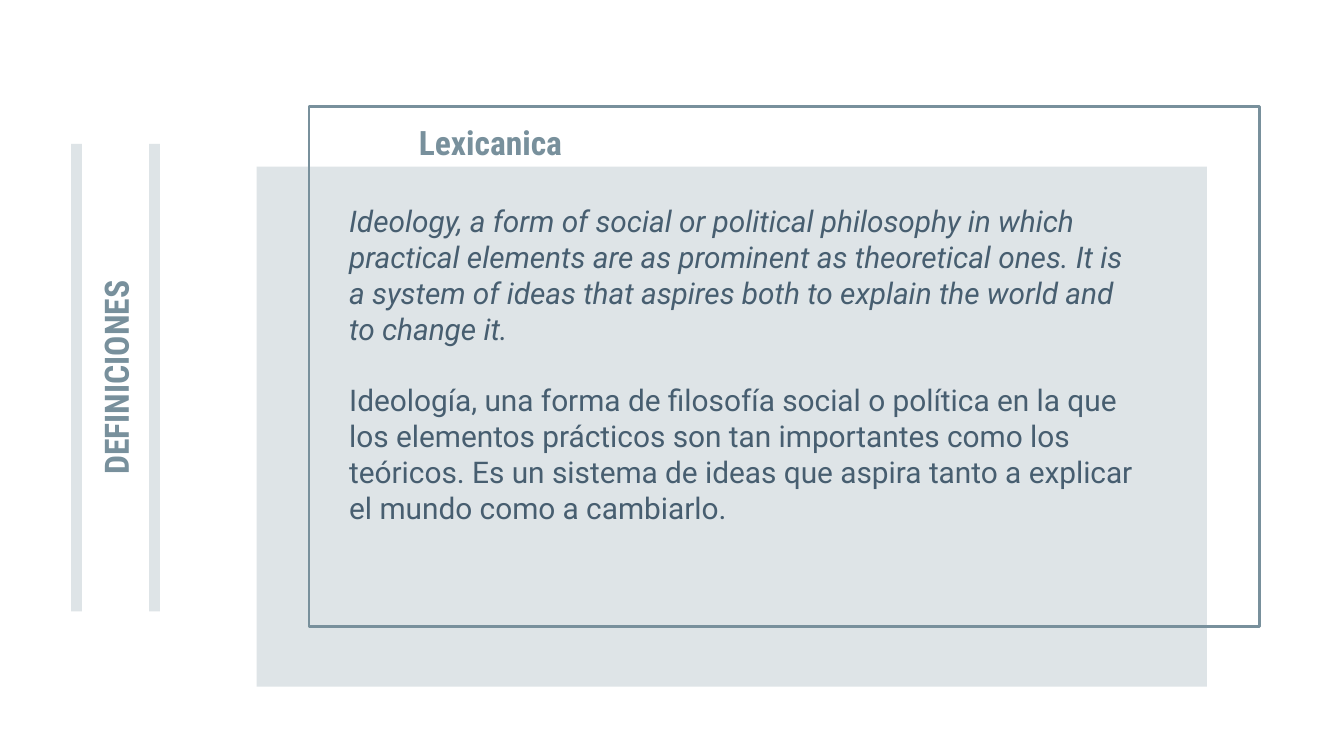
from lxml.etree import SubElement
from pptx import Presentation
from pptx.dml.color import RGBColor
from pptx.enum.shapes import MSO_SHAPE as Shape
from pptx.enum.text import MSO_ANCHOR as Anchor, MSO_AUTO_SIZE as AutoSize, PP_ALIGN as Align
from pptx.oxml.ns import qn
from pptx.util import Inches, Pt

SLATE = RGBColor(0x78, 0x90, 0x9C)
INK = RGBColor(0x47, 0x5E, 0x70)
ENGLISH = (
    "Ideology, a form of social or political philosophy in which practical elements "
    "are as prominent as theoretical ones. It is a system of ideas that aspires both "
    "to explain the world and to change it."
)
SPANISH = (
    "Ideología, una forma de filosofía social o política en la que los elementos "
    "prácticos son tan importantes como los teóricos. Es un sistema de ideas que "
    "aspira tanto a explicar el mundo como a cambiarlo."
)


def add_rectangle(slide, left, top, width, height):
    """Add a rectangle without a shadow."""
    rectangle = slide.shapes.add_shape(
        Shape.RECTANGLE, Inches(left), Inches(top), Inches(width), Inches(height)
    )
    rectangle.shadow.inherit = False
    return rectangle


def add_outline(slide, *box):
    """Add an unfilled frame with a slate line."""
    frame = add_rectangle(slide, *box)
    frame.fill.background()
    frame.line.color.rgb = SLATE
    frame.line.width = Pt(1.5)


def add_tint(slide, *box):
    """Add a borderless rectangle in translucent slate."""
    tint = add_rectangle(slide, *box)
    tint.fill.solid()
    tint.fill.fore_color.rgb = SLATE
    tint.line.fill.background()
    color = tint.fill._xPr.find(qn("a:solidFill")).find(qn("a:srgbClr"))
    SubElement(color, qn("a:alpha"), val="24000")
    return tint


def style_run(run, font_name, size, color, bold=False, italic=False):
    """Set the typeface and look of a run."""
    font = run.font
    font.name = font_name
    font.size = Pt(size)
    font.color.rgb = color
    font.bold = bold
    font.italic = italic


def write_heading(heading, text, left, top):
    """Place a text shape and give it the centred heading style."""
    heading.left, heading.top = Inches(left), Inches(top)
    heading.width, heading.height = Inches(6.04), Inches(0.8)
    frame = heading.text_frame
    frame.text = text
    frame.word_wrap = True
    frame.auto_size = AutoSize.NONE
    frame.vertical_anchor = Anchor.BOTTOM
    frame.margin_left = frame.margin_right = Inches(0.1)
    frame.margin_top = frame.margin_bottom = Inches(0.1)
    paragraph = frame.paragraphs[0]
    paragraph.alignment = Align.CENTER
    style_run(paragraph.runs[0], "Roboto Condensed", 18, SLATE, bold=True)


def add_definitions(slide):
    """Add the English definition and its Spanish translation."""
    definitions = slide.shapes.add_textbox(
        Inches(2.5), Inches(1.46), Inches(6.04), Inches(2.86)
    )
    frame = definitions.text_frame
    frame.word_wrap = True
    frame.auto_size = AutoSize.SHAPE_TO_FIT_TEXT
    english, spanish = frame.paragraphs[0], frame.add_paragraph()
    english.text, spanish.text = ENGLISH, SPANISH
    spanish.space_before = Pt(19.2)
    style_run(english.runs[0], "Roboto", 16, INK, italic=True)
    style_run(spanish.runs[0], "Roboto", 16, INK)


def main():
    """Build the definitions slide."""
    presentation = Presentation()
    presentation.slide_width = Inches(10)
    presentation.slide_height = presentation.slide_width * 9 // 16
    slide = presentation.slides.add_slide(presentation.slide_layouts[5])

    add_outline(slide, 2.3, 0.79, 7.07, 3.87)
    add_tint(slide, 1.91, 1.24, 7.07, 3.87)
    for bar_left in (-1.17, -0.59):
        add_tint(slide, bar_left, 2.77, 3.48, 0.08).rotation = 270

    title = slide.shapes.title
    write_heading(title, "DEFINICIONES", -2.31, 2.41)
    title.rotation = 270
    add_definitions(slide)
    source = slide.shapes.add_textbox(0, 0, 0, 0)
    write_heading(source, "Lexicanica", 0.63, 0.51)

    presentation.save("out.pptx")


if __name__ == "__main__":
    main()
